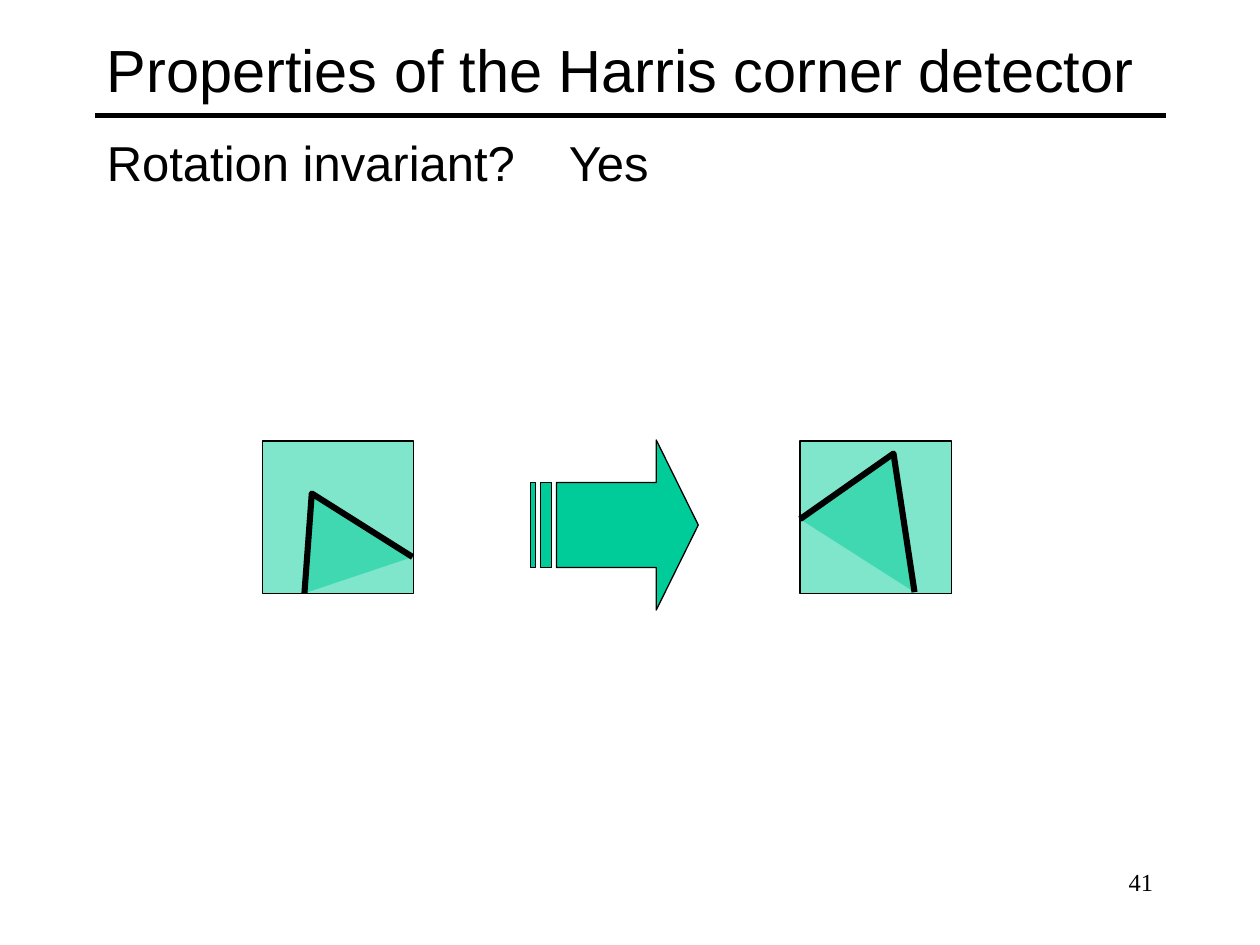
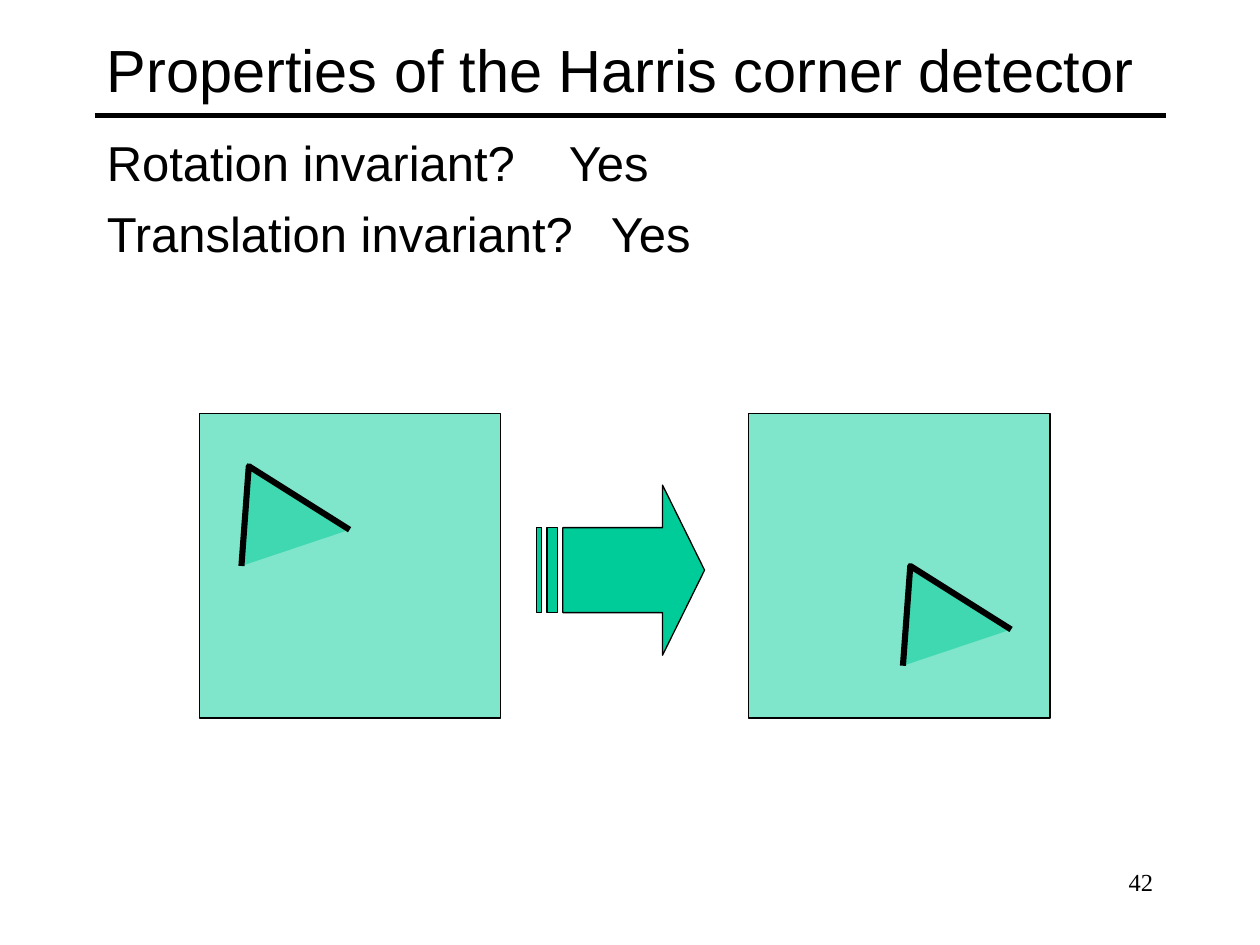
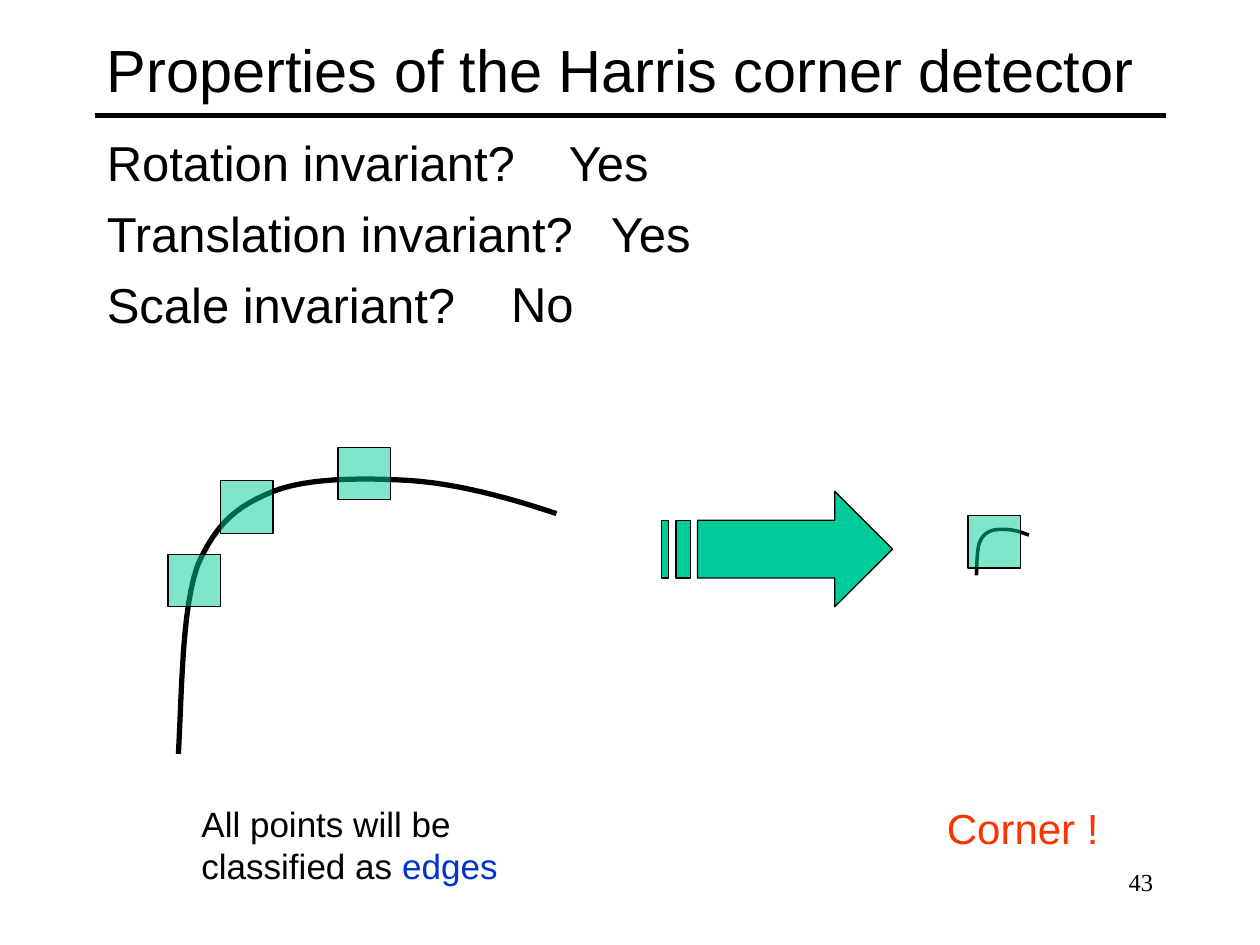
import pptx
import pptx.util
import pptx.dml.color
import pptx.enum.shapes
import pptx.enum.text
import pptx.oxml.ns
import lxml.etree

# Grid: 120 columns by 90 rows of square cells
prs = pptx.Presentation()
prs.slide_width = pptx.util.Inches(10)
prs.slide_height = pptx.util.Inches(7.5)
CELL = prs.slide_width / 120

BLACK, GREEN, BLUE, RED = "000000", "00CC99", "0033CC", "FF3300"
TITLE = "Properties of the Harris corner detector"
ANSWERS = [
    # question, answer, column of the answer
    ("Rotation invariant?", "Yes", 53),
    ("Translation invariant?", "Yes", 57),
    ("Scale invariant?", "No", 47.5),
]
BODY_TOP, ANSWER_STEP = 12, 6.75
WEDGE = [(0, 9.5), (0.7, 0), (10.3, 6.05)]
TURNED_WEDGE = [(0, 6.25), (8.9, 0), (10.9, 13.2)]

# Bend as shares of its box: a start, then cubic segments
BEND_START = (0, 1)
BEND = [
    [(0.01, 0.74), (0.01, 0.48), (0.05, 0.32)],
    [(0.1, 0.16), (0.16, 0.1), (0.25, 0.05)],
    [(0.34, 0), (0.49, 0), (0.61, 0.01)],
    [(0.73, 0.02), (0.87, 0.07), (1, 0.13)],
]


def cells(*values):
    return [round(v * CELL) for v in values]


def rgb(color):
    return pptx.dml.color.RGBColor.from_string(color)


def paint(shape, fill=None, alpha=None, line=BLACK, width=0.75):
    shape.shadow.inherit = False
    if fill:
        shape.fill.solid()
        shape.fill.fore_color.rgb = rgb(fill)
    else:
        shape.fill.background()
    if alpha:
        node = shape.fill._xPr.find(".//" + pptx.oxml.ns.qn("a:srgbClr"))
        lxml.etree.SubElement(node, pptx.oxml.ns.qn("a:alpha"), val=str(alpha * 1000))
    shape.line.color.rgb = rgb(line)
    shape.line.width = pptx.util.Pt(width)


def text(s, box, paragraphs, size=28, font="Arial", color=BLACK, align="LEFT",
         anchor="TOP", before=0, hang=0):
    """Each paragraph is a string or a list of (string, colour) runs."""
    tf = s.shapes.add_textbox(*cells(*box)).text_frame
    tf.word_wrap = True
    tf.vertical_anchor = getattr(pptx.enum.text.MSO_ANCHOR, anchor)
    for i, runs in enumerate(paragraphs):
        p = tf.add_paragraph() if i else tf.paragraphs[0]
        p.alignment = getattr(pptx.enum.text.PP_ALIGN, align)
        if i:
            p.space_before = pptx.util.Pt(before)
        if hang:
            indent = cells(hang)[0]
            p._p.get_or_add_pPr().set("marL", str(indent))
            p._p.get_or_add_pPr().set("indent", str(-indent))
        for words, tint in [(runs, color)] if isinstance(runs, str) else runs:
            r = p.add_run()
            r.text = words
            r.font.size = pptx.util.Pt(size)
            r.font.name = font
            r.font.color.rgb = rgb(tint)


def outline(s, x, y, contours, close=False, **style):
    """Draw contours whose points are in cells from (x, y)."""
    fb = None
    for contour in contours:
        points = [cells(x + dx, y + dy) for dx, dy in contour]
        if fb is None:
            fb = s.shapes.build_freeform(*points[0], scale=1.0)
        else:
            fb.move_to(*points[0])
        fb.add_line_segments(points[1:], close=close)
    paint(fb.convert_to_shape(), **style)


# Parts of the drawings
def patch(s, x, y, w, h):
    sp = s.shapes.add_shape(pptx.enum.shapes.MSO_SHAPE.RECTANGLE, *cells(x, y, w, h))
    paint(sp, GREEN, alpha=50)


def wedge(s, x, y, points=WEDGE):
    outline(s, x, y, [points], fill=GREEN, alpha=50, width=3.5)


def striped_arrow(s, x, y, w, h):
    def bar(left, right):
        return [(left, 1 / 4), (left, 3 / 4), (right, 3 / 4), (right, 1 / 4)]

    body = [(3 / 4, 0), (3 / 4, 1 / 4), (5 / 32, 1 / 4), (5 / 32, 3 / 4),
            (3 / 4, 3 / 4), (3 / 4, 1), (1, 1 / 2)]
    contours = [body, bar(1 / 16, 1 / 8), bar(0, 1 / 32)]
    outline(s, x, y, [[(px * w, py * h) for px, py in c] for c in contours],
            close=True, fill=GREEN)


def bend(s, x, y, w, h, width, steps=12):
    points = [BEND_START]
    for c1, c2, end in BEND:
        start = points[-1]
        for i in range(1, steps + 1):
            t = i / steps
            u = 1 - t
            points.append(tuple(
                u**3 * a + 3 * u * u * t * b + 3 * u * t * t * c + t**3 * d
                for a, b, c, d in zip(start, c1, c2, end)))
    outline(s, x, y, [[(px * w, py * h) for px, py in points]], width=width)


# Title, rule, questions with answers, and slide number
def frame(number, count):
    s = prs.slides.add_slide(prs.slide_layouts[6])
    rule = s.shapes.add_connector(pptx.enum.shapes.MSO_CONNECTOR.STRAIGHT,
                                  *cells(9, 11, 111, 11))
    rule.line.color.rgb = rgb(BLACK)
    rule.line.width = pptx.util.Pt(3)
    lxml.etree.SubElement(rule._element.spPr, pptx.oxml.ns.qn("a:effectLst"))
    text(s, (9, 1, 102, 11), [TITLE], size=34, anchor="MIDDLE")
    shown = ANSWERS[:count]
    text(s, (9, BODY_TOP, 102, 30), [q for q, _, _ in shown], before=7, hang=4.5)
    for i, (_, answer, column) in enumerate(shown):
        text(s, (column, BODY_TOP + i * ANSWER_STEP, 25, 6.8), [answer])
    text(s, (86, 82, 25, 6), [str(number)], size=14, font="Times New Roman",
         align="RIGHT")
    return s


def rotation_slide(s, left=25, right=76.2, top=42):
    for x in (left, right):
        patch(s, x, top, 14.4, 14.5)
    wedge(s, left + 4, top + 5)
    wedge(s, right, top + 1.2, TURNED_WEDGE)
    striped_arrow(s, 50.5, top - 0.1, 16, 16.2)


def translation_slide(s, left=19, right=71.3, top=39.4):
    for x, dx, dy in ((left, 4, 5), (right, 14.7, 14.5)):
        patch(s, x, top, 28.7, 29)
        wedge(s, x + dx, top + dy)
    striped_arrow(s, 51.1, top + 6.8, 16, 16.2)


def scale_slide(s, label_top=75.8):
    # Large bend: every window sees an edge
    bend(s, 17, 45.5, 36, 26.3, width=3)
    for x, y in ((16, 52.8), (21, 45.8), (32.2, 42.6)):
        patch(s, x, y, 5, 5)
    text(s, (18, label_top, 34, 9.2),
         [[("All points will be classified as ", BLACK), ("edges", BLUE)]], size=20)
    # Small bend: one window sees a corner
    bend(s, 93, 50.4, 5, 4.4, width=2)
    patch(s, 92.2, 49.1, 5, 5)
    striped_arrow(s, 63, 46.8, 22, 11)
    text(s, (89, label_top, 18, 6), ["Corner !"], size=24, color=RED)


def main():
    for i, draw in enumerate((rotation_slide, translation_slide, scale_slide)):
        draw(frame(41 + i, i + 1))
    prs.save("out.pptx")


if __name__ == "__main__":
    main()
